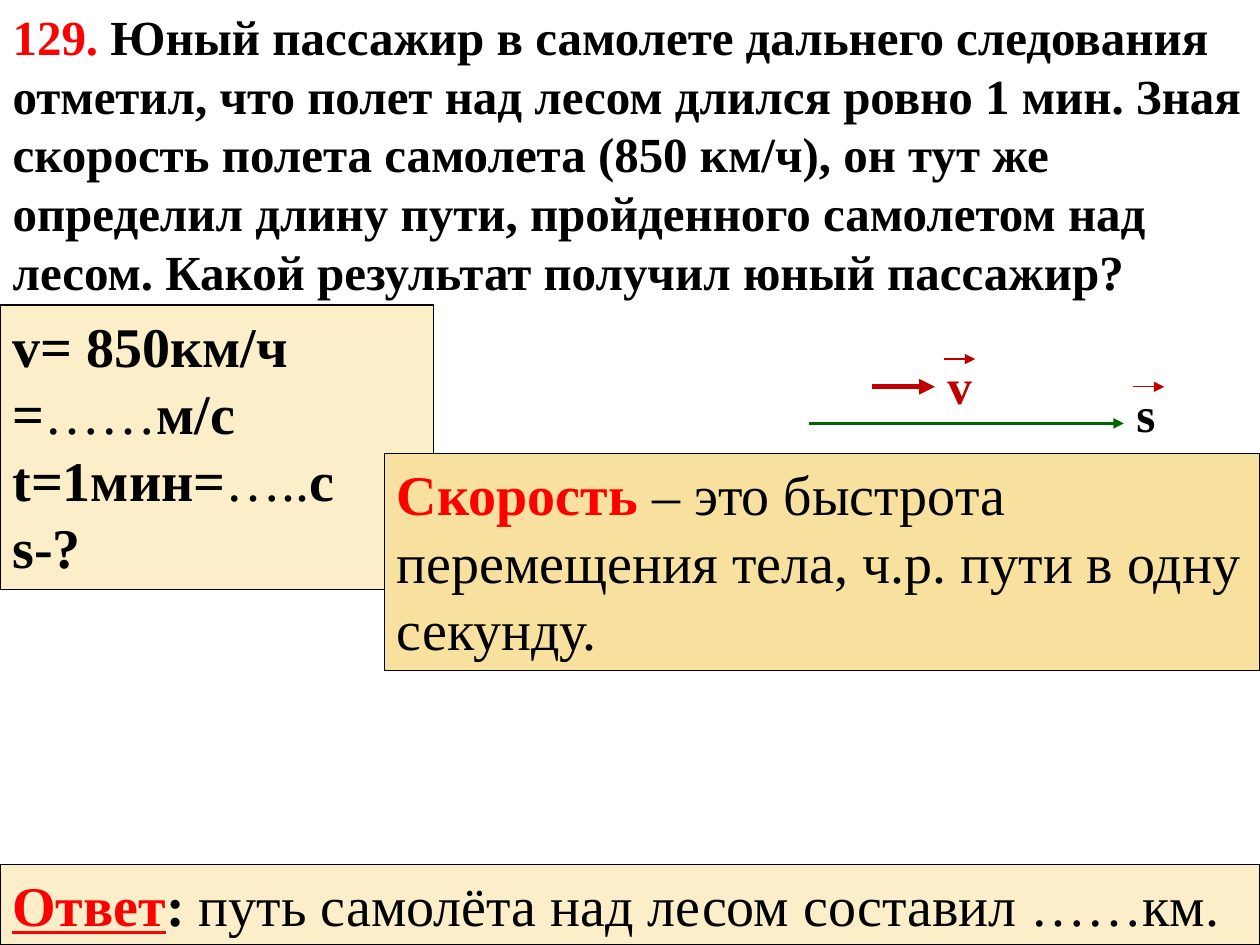
from dataclasses import dataclass

from lxml.etree import SubElement
from pptx import Presentation
from pptx.dml.color import RGBColor
from pptx.enum.shapes import MSO_CONNECTOR, MSO_SHAPE
from pptx.enum.text import MSO_ANCHOR, MSO_AUTO_SIZE, PP_ALIGN
from pptx.oxml.ns import qn
from pptx.util import Inches, Pt

COLORS = {
    "black": "000000",
    "white": "FFFFFF",
    "red": "FF0000",
    "dark_red": "C00000",
    "green": "006600",
    "cream": "FBEEC9",
    "gold": "F8E19F",
}
FONT = "Times New Roman"


@dataclass(frozen=True)
class Span:
    text: str
    color: str = "black"
    bold: bool = True
    underline: bool = False


@dataclass(frozen=True)
class Panel:
    left: float
    top: float
    width: float
    height: float
    fill: str
    paragraphs: list[list[Span]]


@dataclass(frozen=True)
class Arrow:
    left: float
    y: float
    length: float
    color: str
    weight: float


@dataclass(frozen=True)
class VectorLabel:
    letter: str
    left: float
    top: float
    color: str


PROBLEM = [[
    Span("129. ", "red"),
    Span("Юный пассажир в самолете дальнего следования отметил, что полет над "
         "лесом длился ровно 1 мин. Зная скорость полета самолета (850 км/ч), "
         "он тут же определил длину пути, пройденного самолетом над лесом. "
         "Какой результат получил юный пассажир?"),
]]
GIVEN = Panel(0, 2.42, 3.44, 2.26, "cream", [
    [Span("v= 850км/ч ="), Span("……", bold=False), Span("м/с")],
    [Span("t=1мин="), Span("…..", bold=False), Span("с")],
    [Span("s-?")],
])
ANSWER = Panel(0, 6.86, 10, 0.64, "cream", [[
    Span("Ответ", "red", underline=True),
    Span(": "),
    Span("путь самолёта над лесом составил ……км.", bold=False),
]])
DEFINITION = Panel(3.05, 3.6, 6.95, 1.72, "gold", [[
    Span("Скорость", "red"),
    Span(" – это быстрота перемещения тела, ч.р. пути в одну секунду.", bold=False),
]])
ARROWS = [
    Arrow(6.42, 3.36, 2.5, "green", 1.5),
    Arrow(6.92, 3.07, 0.5, "dark_red", 3),
]
VECTOR_LABELS = [
    VectorLabel("v", 7.42, 2.73, "dark_red"),
    VectorLabel("s", 8.92, 2.95, "black"),
]


def rgb(name: str) -> RGBColor:
    return RGBColor.from_string(COLORS[name])


def write_text(shape, paragraphs: list[list[Span]], *, size: float,
               wrap: bool = True, space_after: float = 0,
               line_spacing: float = 1.0) -> None:
    frame = shape.text_frame
    frame.word_wrap = wrap
    frame.auto_size = MSO_AUTO_SIZE.NONE
    frame.vertical_anchor = MSO_ANCHOR.TOP
    for index, spans in enumerate(paragraphs):
        paragraph = frame.add_paragraph() if index else frame.paragraphs[0]
        paragraph.alignment = PP_ALIGN.LEFT
        paragraph.space_before = Pt(0)
        paragraph.space_after = Pt(space_after)
        paragraph.line_spacing = line_spacing
        for span in spans:
            run = paragraph.add_run()
            run.text = span.text
            run.font.name = FONT
            run.font.size = Pt(size)
            run.font.bold = span.bold
            run.font.underline = span.underline
            run.font.color.rgb = rgb(span.color)


def place(shape, left: float, top: float, width: float, height: float) -> None:
    shape.left, shape.top = Inches(left), Inches(top)
    shape.width, shape.height = Inches(width), Inches(height)


def add_box(shapes, left: float, top: float, width: float, height: float,
            fill: str, outlined: bool = True):
    box = shapes.add_shape(MSO_SHAPE.RECTANGLE, Inches(left), Inches(top),
                           Inches(width), Inches(height))
    box.shadow.inherit = False
    box.fill.solid()
    box.fill.fore_color.rgb = rgb(fill)
    if outlined:
        box.line.color.rgb = rgb("black")
        box.line.width = Pt(0.75)
    else:
        box.line.fill.background()
    return box


def add_panel(shapes, panel: Panel) -> None:
    box = add_box(shapes, panel.left, panel.top, panel.width, panel.height, panel.fill)
    write_text(box, panel.paragraphs, size=32)


def add_arrow(shapes, arrow: Arrow) -> None:
    y = Inches(arrow.y)
    connector = shapes.add_connector(MSO_CONNECTOR.STRAIGHT, Inches(arrow.left), y,
                                     Inches(arrow.left + arrow.length), y)
    connector.line.color.rgb = rgb(arrow.color)
    connector.line.width = Pt(arrow.weight)
    SubElement(connector.line._get_or_add_ln(), qn("a:tailEnd"), type="triangle")
    SubElement(connector._element.spPr, qn("a:effectLst"))


def add_vector_label(shapes, label: VectorLabel) -> None:
    """Group a letter with the small vector arrow above it."""
    group = shapes.add_group_shape()
    box = add_box(group.shapes, label.left, label.top, 0.38, 0.44, "white", outlined=False)
    write_text(box, [[Span(label.letter, label.color)]], size=28, wrap=False,
               space_after=10, line_spacing=1.1)
    add_arrow(group.shapes,
              Arrow(label.left + 0.07, label.top + 0.12, 0.25, "dark_red", 0.75))


def main() -> None:
    presentation = Presentation()
    presentation.slide_width, presentation.slide_height = Inches(10), Inches(7.5)
    slide = presentation.slides.add_slide(presentation.slide_layouts[5])
    shapes = slide.shapes

    place(shapes.title, 0, 0, 10, 2.46)
    write_text(shapes.title, PROBLEM, size=28)
    add_panel(shapes, GIVEN)
    add_panel(shapes, ANSWER)
    for arrow in ARROWS:
        add_arrow(shapes, arrow)
    for label in VECTOR_LABELS:
        add_vector_label(shapes, label)
    add_panel(shapes, DEFINITION)

    presentation.save("out.pptx")


if __name__ == "__main__":
    main()
